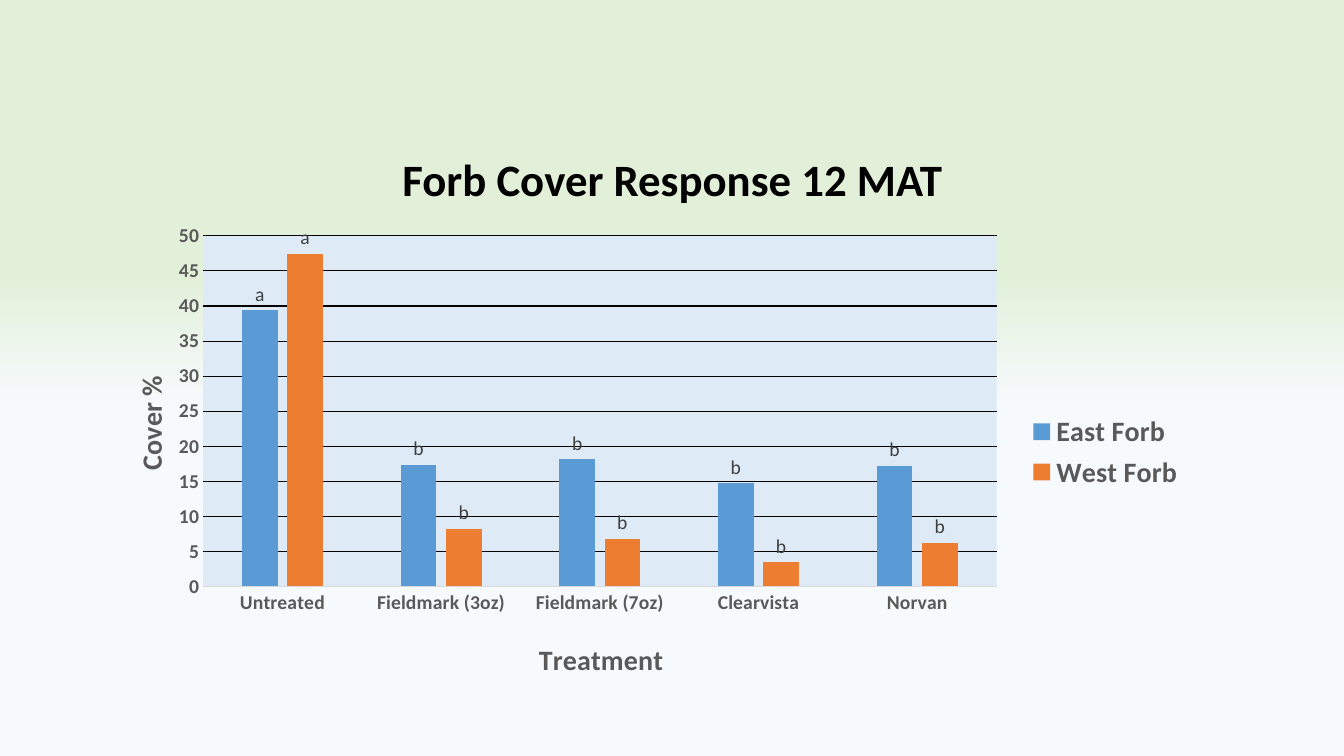
import pptx
import pptx.chart.data
import pptx.dml.color
import pptx.enum.chart
import pptx.enum.text
import pptx.oxml
import pptx.oxml.ns
import pptx.util

RGB = pptx.dml.color.RGBColor
BLACK = RGB(0x00, 0x00, 0x00)
DARK_GREY = RGB(0x40, 0x40, 0x40)
GREY = RGB(0x59, 0x59, 0x59)
LIGHT_GREY = RGB(0xD9, 0xD9, 0xD9)
PALE_GREEN = RGB(0xE2, 0xF0, 0xD9)
PALE_BLUE = RGB(0xF7, 0xFA, 0xFD)
PLOT_BLUE = RGB(0xDE, 0xEB, 0xF7)
BLUE = RGB(0x5B, 0x9B, 0xD5)
ORANGE = RGB(0xED, 0x7D, 0x31)

SLIDE_WIDTH, SLIDE_HEIGHT = 1344, 756
TREATMENTS = ["Untreated", "Fieldmark (3oz)", "Fieldmark (7oz)", "Clearvista", "Norvan"]
FORB_COVER = {
    "East Forb": ([39.4, 17.3, 18.1, 14.7, 17.2], BLUE),
    "West Forb": ([47.4, 8.2, 6.8, 3.4, 6.2], ORANGE),
}
SIGNIFICANCE = "abbbb"


def px(length):
    return pptx.util.Emu(round(length * 12192000 / SLIDE_WIDTH))


class ForbSlide:
    font_name = "Calibri"

    def __init__(self, deck):
        self.slide = deck.slides.add_slide(deck.slide_layouts[5])

    def style(self, font, size, color, bold=True):
        font.name = self.font_name
        font.size = pptx.util.Pt(size)
        font.bold = bold
        font.color.rgb = color

    def background(self, stops):
        fill = self.slide.background.fill
        fill.gradient()
        fill.gradient_angle = 270
        for stop, (position, color) in zip(fill.gradient_stops, stops):
            stop.position = position
            stop.color.rgb = color

    def title(self, text, left, top, width, height):
        heading = self.slide.shapes.title
        heading.left, heading.top = px(left), px(top)
        heading.width, heading.height = px(width), px(height)
        frame = heading.text_frame
        frame.text = text
        frame.vertical_anchor = pptx.enum.text.MSO_ANCHOR.MIDDLE
        paragraph = frame.paragraphs[0]
        paragraph.alignment = pptx.enum.text.PP_ALIGN.CENTER
        paragraph.line_spacing = 0.9
        self.style(paragraph.font, 32, BLACK)

    def place(self, element, index, target="", **fractions):
        for old in element.findall(pptx.oxml.ns.qn("c:layout")):
            element.remove(old)
        modes = "".join(f'<c:{axis}Mode val="edge"/>' for axis in "xy")
        sizes = "".join(f'<c:{key} val="{value}"/>' for key, value in fractions.items())
        element.insert(index, pptx.oxml.parse_xml(
            f'<c:layout {pptx.oxml.ns.nsdecls("c")}><c:manualLayout>'
            f'{target}{modes}{sizes}</c:manualLayout></c:layout>'))

    def axis(self, axis, title, x, y):
        axis.major_tick_mark = pptx.enum.chart.XL_TICK_MARK.NONE
        self.style(axis.tick_labels.font, 14, GREY)
        frame = axis.axis_title.text_frame
        frame.text = title
        self.style(frame.paragraphs[0].font, 20, GREY)
        self.place(axis.axis_title._element, 1, x=x, y=y)
        return frame

    def column_chart(self, left, top, width, height):
        data = pptx.chart.data.CategoryChartData()
        data.categories = TREATMENTS
        for name, (cover, _) in FORB_COVER.items():
            data.add_series(name, cover)
        chart = self.slide.shapes.add_chart(
            pptx.enum.chart.XL_CHART_TYPE.COLUMN_CLUSTERED,
            px(left), px(top), px(width), px(height), data).chart
        chart.has_title = False
        self.style(chart.font, 10, BLACK, False)

        columns = chart.plots[0]
        columns.gap_width, columns.overlap = 219, -27
        columns.vary_by_categories = False
        for series, (_, color) in zip(columns.series, FORB_COVER.values()):
            self.series(series, color)

        treatment = chart.category_axis
        self.axis(treatment, "Treatment", 0.4, 0.88)
        treatment.format.line.color.rgb = LIGHT_GREY
        treatment.format.line.width = pptx.util.Pt(0.75)

        cover_axis = chart.value_axis
        cover_title = self.axis(cover_axis, "Cover %", 0.03, 0.33)
        cover_title._txBody.bodyPr.set("rot", "-5400000")
        cover_title._txBody.bodyPr.set("vert", "horz")
        cover_axis.minimum_scale, cover_axis.maximum_scale = 0, 50
        cover_axis.major_unit = 5
        cover_axis.format.line.fill.background()
        gridline = cover_axis.major_gridlines.format.line
        gridline.color.rgb = BLACK
        gridline.width = pptx.util.Pt(0.75)

        chart.has_legend = True
        chart.legend.position = pptx.enum.chart.XL_LEGEND_POSITION.RIGHT
        chart.legend.include_in_layout = False
        self.style(chart.legend.font, 20, GREY)
        self.plot_area(chart)

    def series(self, series, color):
        series.format.fill.solid()
        series.format.fill.fore_color.rgb = color
        outside = pptx.enum.chart.XL_LABEL_POSITION.OUTSIDE_END
        labels = series.data_labels
        labels.show_value = True
        labels.position = outside
        self.style(labels.font, 14, DARK_GREY)
        for index, letter in enumerate(SIGNIFICANCE):
            label = series.points[index].data_label
            label.text_frame.text = letter
            self.style(label.text_frame.paragraphs[0].font, 14, DARK_GREY, False)
            label.position = outside

    def plot_area(self, chart):
        area = chart._chartSpace.chart.plotArea
        self.place(area, 0, '<c:layoutTarget val="inner"/>', x=0.1, y=0.05, w=0.72, h=0.73)
        area.append(pptx.oxml.parse_xml(
            f'<c:spPr {pptx.oxml.ns.nsdecls("c", "a")}><a:solidFill>'
            f'<a:srgbClr val="{PLOT_BLUE}"/></a:solidFill></c:spPr>'))


def main():
    deck = pptx.Presentation()
    deck.slide_width, deck.slide_height = px(SLIDE_WIDTH), px(SLIDE_HEIGHT)
    forbs = ForbSlide(deck)
    forbs.background([(0.36, PALE_GREEN), (0.54, PALE_BLUE)])
    forbs.title("Forb Cover Response 12 MAT", 93, 109, 1159, 146)
    forbs.column_chart(93, 212, 1102, 480)
    deck.save("out.pptx")


if __name__ == "__main__":
    main()
